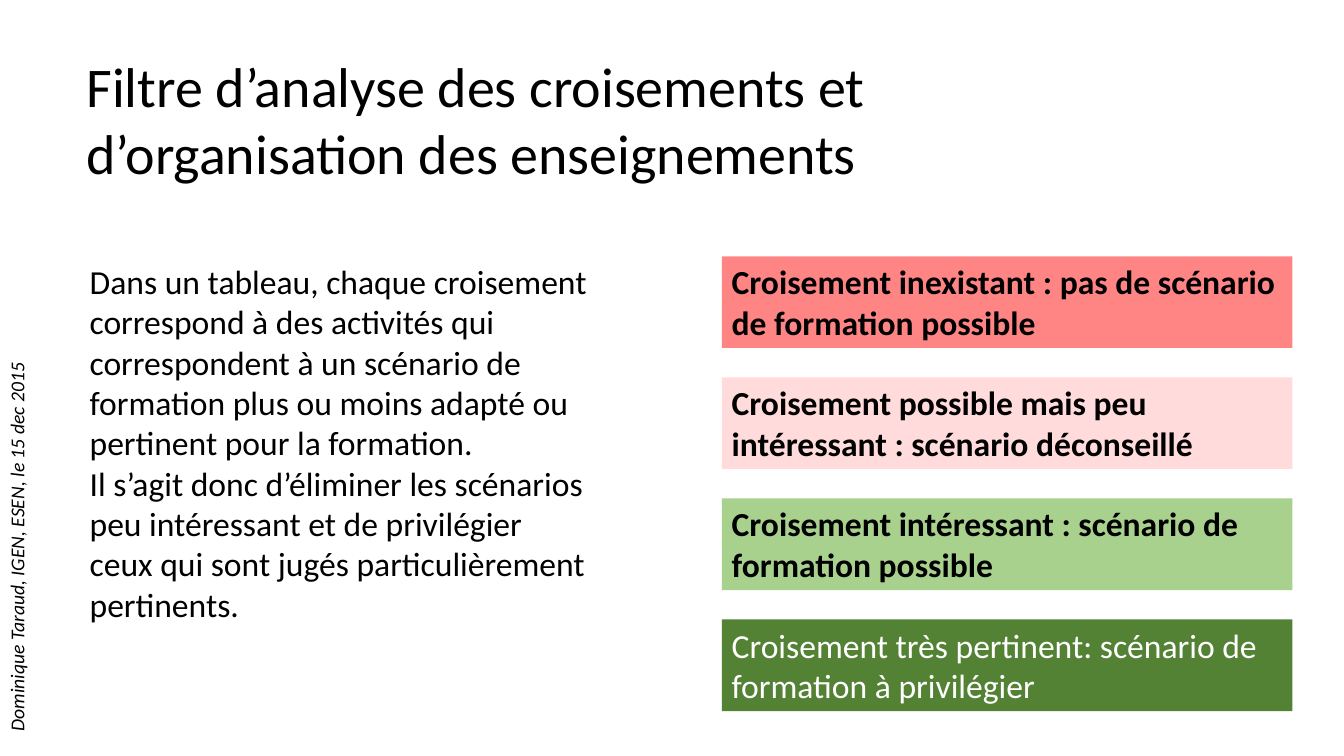
from dataclasses import dataclass

from lxml import etree
from pptx import Presentation
from pptx import util as u
from pptx.dml.color import RGBColor
from pptx.enum import shapes, text
from pptx.oxml import ns
from pptx.shapes.autoshape import Shape
from pptx.slide import Slide

FONT = "Calibri"


@dataclass(frozen=True)
class Label:
    paragraphs: tuple[str, ...]
    left: float
    top: float
    width: float
    height: float
    size: float = 24
    italic: bool = False
    rotation: float = 0


@dataclass(frozen=True)
class Verdict:
    wording: str
    fill: str
    opacity: int = 100
    color: str = "000000"
    bold: bool = True


LABELS = (
    Label(("Dominique Taraud, IGEN, ESEN, le 15 dec 2015",),
          -6.27, 11.56, 13.39, 0.86, size=14, italic=True, rotation=270),
    Label(("Filtre d’analyse des croisements et d’organisation des enseignements",),
          1.93, 1.17, 26.47, 3.68, size=40),
    Label(("Dans un tableau, chaque croisement correspond à des activités qui "
           "correspondent à un scénario de formation plus ou moins adapté ou "
           "pertinent pour la formation.",
           "Il s’agit donc d’éliminer les scénarios peu intéressant et de privilégier "
           "ceux qui sont jugés particulièrement pertinents."),
          2.01, 6.45, 13.13, 9.5),
)

VERDICTS = (
    Verdict("Croisement inexistant : pas de scénario de formation possible",
            "FF0000", opacity=48),
    Verdict("Croisement possible mais peu intéressant : scénario déconseillé",
            "FF0000", opacity=14),
    Verdict("Croisement intéressant : scénario de formation possible", "A9D18E"),
    Verdict("Croisement très pertinent: scénario de formation à privilégier",
            "548235", color="FFFFFF", bold=False),
)
VERDICT_LEFT, VERDICT_TOP = 18.19, 6.46
VERDICT_WIDTH, VERDICT_HEIGHT = 14.38, 2.31
VERDICT_PITCH = 3.05


def rgb(value: str) -> RGBColor:
    return RGBColor.from_string(value)


def write(shape: Shape, paragraphs: tuple[str, ...], size: float,
          color: str = "000000", bold: bool = False, italic: bool = False) -> None:
    frame = shape.text_frame
    frame.word_wrap = True
    frame.auto_size = text.MSO_AUTO_SIZE.SHAPE_TO_FIT_TEXT
    frame.vertical_anchor = text.MSO_ANCHOR.TOP
    for index, wording in enumerate(paragraphs):
        paragraph = frame.add_paragraph() if index else frame.paragraphs[0]
        paragraph.alignment = text.PP_ALIGN.LEFT
        run = paragraph.add_run()
        run.text = wording
        run.font.name = FONT
        run.font.size = u.Pt(size)
        run.font.bold = bold
        run.font.italic = italic
        run.font.color.rgb = rgb(color)


def draw_label(slide: Slide, label: Label) -> None:
    shape = slide.shapes.add_textbox(u.Cm(label.left), u.Cm(label.top),
                                     u.Cm(label.width), u.Cm(label.height))
    shape.rotation = label.rotation
    write(shape, label.paragraphs, label.size, italic=label.italic)


def draw_verdict(slide: Slide, verdict: Verdict, row: int) -> None:
    shape = slide.shapes.add_shape(
        shapes.MSO_SHAPE.RECTANGLE,
        u.Cm(VERDICT_LEFT), u.Cm(VERDICT_TOP + row * VERDICT_PITCH),
        u.Cm(VERDICT_WIDTH), u.Cm(VERDICT_HEIGHT))
    shape.shadow.inherit = False
    shape.line.fill.background()
    shape.fill.solid()
    shape.fill.fore_color.rgb = rgb(verdict.fill)
    if verdict.opacity < 100:
        color = shape.element.spPr.find(ns.qn("a:solidFill")).find(ns.qn("a:srgbClr"))
        etree.SubElement(color, ns.qn("a:alpha")).set("val", str(verdict.opacity * 1000))
    write(shape, (verdict.wording,), 24, verdict.color, verdict.bold)


def main() -> None:
    presentation = Presentation()
    presentation.slide_width = u.Cm(33.87)
    presentation.slide_height = u.Cm(19.05)
    slide = presentation.slides.add_slide(presentation.slide_layouts[6])
    for label in LABELS:
        draw_label(slide, label)
    for row, verdict in enumerate(VERDICTS):
        draw_verdict(slide, verdict, row)
    presentation.save("out.pptx")


if __name__ == "__main__":
    main()
